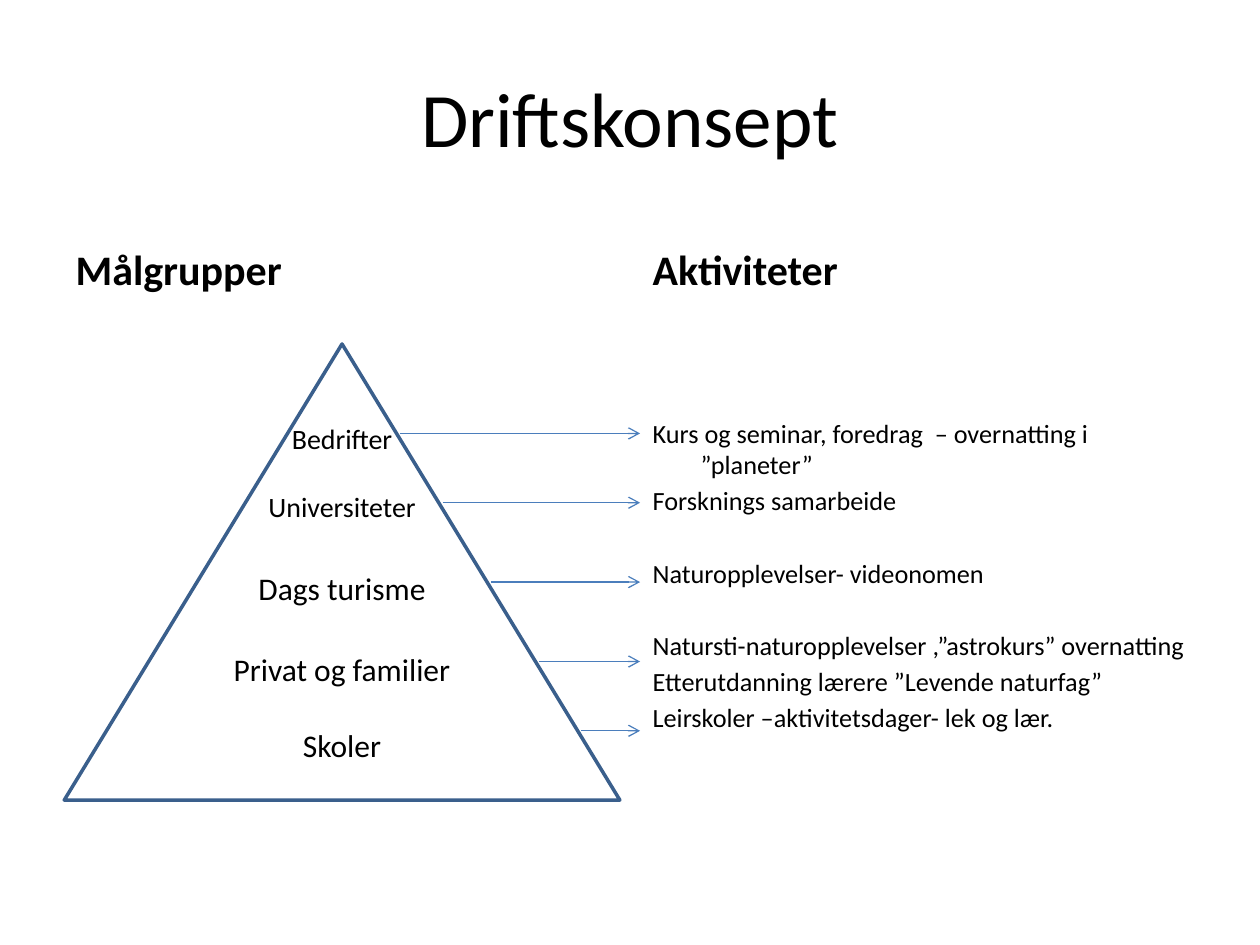
from collections import namedtuple
from dataclasses import dataclass

from lxml import etree
from pptx import Presentation
from pptx import util as u
from pptx.dml.color import RGBColor
from pptx.enum import shapes, text
from pptx.oxml.ns import qn

COLUMNS, ROWS = 100, 75
SLIDE_WIDTH, SLIDE_HEIGHT = u.Inches(10), u.Inches(7.5)
COMPARISON_LAYOUT = 4

Box = namedtuple("Box", "left top width height")


@dataclass(frozen=True)
class Theme:
    font: str = "Calibri"
    ink: RGBColor = RGBColor(0, 0, 0)
    paper: RGBColor = RGBColor(255, 255, 255)
    outline: RGBColor = RGBColor(0x3A, 0x5F, 0x8C)
    arrow: RGBColor = RGBColor(0x4B, 0x7E, 0xBC)
    title: int = 44
    heading: int = 24
    group: int = 18
    small_group: int = 16
    activity: int = 15


THEME = Theme()
LINE_GAP, BLOCK_GAP = 2.6, 23.4
ACTIVITIES = [
    ("Kurs og seminar, foredrag  – overnatting i ”planeter”", 0),
    ("Forsknings samarbeide", LINE_GAP),
    ("Naturopplevelser- videonomen", BLOCK_GAP),
    ("Natursti-naturopplevelser ,”astrokurs” overnatting", BLOCK_GAP),
    ("Etterutdanning lærere ”Levende naturfag”", LINE_GAP),
    ("Leirskoler –aktivitetsdager- lek og lær.", LINE_GAP),
]
UPPER_GROUPS = [
    ("Bedrifter", 34.8, THEME.small_group),
    ("Universiteter", 40.2, THEME.small_group),
    ("Dags turisme", 46.7, THEME.group),
]
BASE_GROUPS = ["Privat og familier", "Skoler"]
ARROW_ROWS = [34.4, 39.9, 46.2, 52.5, 58]


def across(columns):
    return round(SLIDE_WIDTH * columns / COLUMNS)


def down(rows):
    return round(SLIDE_HEIGHT * rows / ROWS)


def place(shape, box):
    shape.left, shape.top = across(box.left), down(box.top)
    shape.width, shape.height = across(box.width), down(box.height)


def write(paragraph, words, size, align, bold=False, gap=0):
    paragraph.text = words
    paragraph.alignment = align
    paragraph.space_before = u.Pt(gap)
    font = paragraph.font
    font.name, font.size, font.bold = THEME.font, u.Pt(size), bold
    font.color.rgb = THEME.ink


def add_paragraphs(frame, count):
    for _ in range(count - 1):
        frame.add_paragraph()
    return frame.paragraphs


def fill_heading(placeholder, box, words, size, align, anchor, bold):
    place(placeholder, box)
    frame = placeholder.text_frame
    frame.vertical_anchor = anchor
    write(frame.paragraphs[0], words, size, align, bold)


def fill_activities(placeholder, box):
    place(placeholder, box)
    frame = placeholder.text_frame
    frame.auto_size = text.MSO_AUTO_SIZE.NONE
    frame.margin_top = down(9.3)
    indent = across(3.8)
    paragraphs = add_paragraphs(frame, len(ACTIVITIES))
    for paragraph, (words, gap) in zip(paragraphs, ACTIVITIES):
        write(paragraph, words, THEME.activity, text.PP_ALIGN.LEFT, gap=gap)
        properties = paragraph._p.get_or_add_pPr()
        properties.set("marL", str(indent))
        properties.set("indent", str(-indent))
        etree.SubElement(properties, qn("a:buNone"))


def add_pyramid(slide, box):
    pyramid = slide.shapes.add_shape(
        shapes.MSO_SHAPE.ISOSCELES_TRIANGLE, 0, 0, 0, 0)
    place(pyramid, box)
    pyramid.shadow.inherit = False
    pyramid.fill.solid()
    pyramid.fill.fore_color.rgb = THEME.paper
    pyramid.line.color.rgb = THEME.outline
    pyramid.line.width = u.Pt(2)
    frame = pyramid.text_frame
    frame.vertical_anchor = text.MSO_ANCHOR.BOTTOM
    frame.margin_bottom = down(2.9)
    paragraphs = add_paragraphs(frame, len(BASE_GROUPS))
    for index, (paragraph, words) in enumerate(zip(paragraphs, BASE_GROUPS)):
        write(paragraph, words, THEME.group, text.PP_ALIGN.CENTER,
              gap=21.5 * index)

    width, height = 16.5, 4
    for words, middle, size in UPPER_GROUPS:
        label = slide.shapes.add_textbox(0, 0, 0, 0)
        place(label, Box(box.left + (box.width - width) / 2,
                         middle - height / 2, width, height))
        label.text_frame.word_wrap = True
        label.text_frame.vertical_anchor = text.MSO_ANCHOR.MIDDLE
        write(label.text_frame.paragraphs[0], words, size,
              text.PP_ALIGN.CENTER)


def add_arrows(slide, box, end):
    for row in ARROW_ROWS:
        share = (row - box.top) / box.height
        start = box.left + box.width / 2 * (1 + share) + 0.3
        arrow = slide.shapes.add_connector(
            shapes.MSO_CONNECTOR.STRAIGHT,
            across(start), down(row), across(end), down(row))
        arrow.line.color.rgb = THEME.arrow
        arrow.line.width = u.Pt(0.75)
        etree.SubElement(arrow.line._get_or_add_ln(), qn("a:tailEnd"),
                         type="arrow")
        etree.SubElement(arrow._element.spPr, qn("a:effectLst"))


def build_concept_slide(presentation):
    layout = presentation.slide_layouts[COMPARISON_LAYOUT]
    slide = presentation.slides.add_slide(layout)
    title, left_heading, left_body, right_heading, right_body = \
        slide.placeholders
    left_body._element.getparent().remove(left_body._element)

    margin, column, right = 5, 44.2, 50.8
    fill_heading(title, Box(margin, 3, COLUMNS - 2 * margin, 12.5),
                 "Driftskonsept", THEME.title, text.PP_ALIGN.CENTER,
                 text.MSO_ANCHOR.MIDDLE, False)
    for heading, left, words in ((left_heading, margin, "Målgrupper"),
                                 (right_heading, right, "Aktiviteter")):
        fill_heading(heading, Box(left, 16.8, column, 7), words,
                     THEME.heading, text.PP_ALIGN.LEFT,
                     text.MSO_ANCHOR.BOTTOM, True)
    fill_activities(right_body, Box(right, 23.8, column, 43.2))

    pyramid_box = Box(5.1, 27.3, 44.1, 36.2)
    add_pyramid(slide, pyramid_box)
    add_arrows(slide, pyramid_box, right)


def main():
    presentation = Presentation()
    presentation.slide_width = SLIDE_WIDTH
    presentation.slide_height = SLIDE_HEIGHT
    build_concept_slide(presentation)
    presentation.save("out.pptx")


if __name__ == "__main__":
    main()
